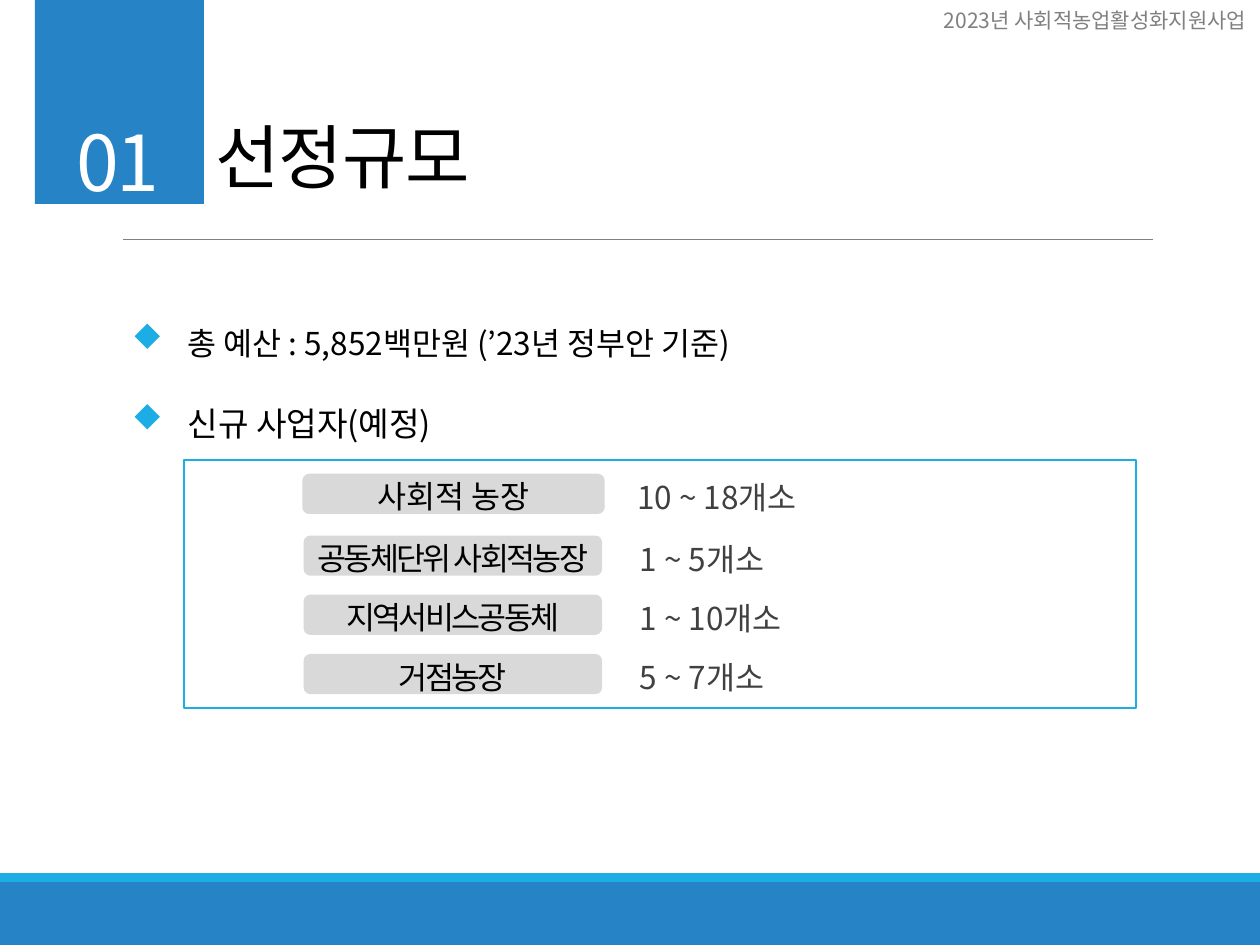
import pptx
import pptx.util
import pptx.dml.color
import pptx.enum.shapes
import pptx.enum.text
import pptx.oxml.ns
import lxml.etree

Pt = pptx.util.Pt
KIND = pptx.enum.shapes.MSO_SHAPE
FIT = pptx.enum.text.MSO_AUTO_SIZE
ALIGN = pptx.enum.text.PP_ALIGN
FACE = "Noto Sans CJK KR"
HUES = {"blue": "2683C6", "sky": "1CADE4", "grey": "808080", "pale": "D9D9D9",
        "dark": "404040", "black": "000000", "white": "FFFFFF"}

# label, count, pill left, top and width, count left, letter spacing
ROWS = [
    ("사회적 농장", "10 ~ 18개소", 172.8, 270.7, 172.8, 357.1, 0),
    ("공동체단위 사회적농장", "1 ~ 5개소", 173.5, 306, 170.6, 358.6, -1.5),
    ("지역서비스공동체", "1 ~ 10개소", 173.5, 339.8, 170.6, 358.6, -1.5),
    ("거점농장", "5 ~ 7개소", 173.5, 373.7, 170.6, 358.6, -1.5),
]


def tint(name):
    return pptx.dml.color.RGBColor.from_string(HUES[name])


def place(item, box):
    item.left, item.top, item.width, item.height = map(Pt, box)


def write(item, text, size=18, hue="black", face=FACE, align=ALIGN.LEFT,
          track=0, lead=1.0, before=0, after=0, anchor="TOP", fit=FIT.NONE):
    frame = item.text_frame
    frame.word_wrap = True
    frame.auto_size = fit
    frame.vertical_anchor = getattr(pptx.enum.text.MSO_ANCHOR, anchor)
    para = frame.paragraphs[0]
    para.alignment = align
    para.line_spacing = lead
    para.space_before, para.space_after = Pt(before), Pt(after)
    run = para.add_run()
    run.text = text
    run.font.size = Pt(size)
    run.font.name = face
    run.font.color.rgb = tint(hue)
    props = run.font._element
    # East Asian face follows the Latin one
    east = lxml.etree.Element(pptx.oxml.ns.qn("a:ea"), typeface=face)
    props.find(pptx.oxml.ns.qn("a:latin")).addnext(east)
    if track:
        props.set("spc", str(int(track * 100)))


def label(slide, box, text, **form):
    item = slide.shapes.add_textbox(*map(Pt, box))
    write(item, text, **form)


def block(slide, box, fill=None, line=None, kind=KIND.RECTANGLE):
    item = slide.shapes.add_shape(kind, *map(Pt, box))
    item.shadow.inherit = False
    if fill:
        item.fill.solid()
        item.fill.fore_color.rgb = tint(fill)
    else:
        item.fill.background()
    if line:
        item.line.color.rgb = tint(line)
        item.line.width = Pt(1.25)
    else:
        item.line.fill.background()


def rule(slide, left, right, top):
    line = slide.shapes.add_connector(
        pptx.enum.shapes.MSO_CONNECTOR.STRAIGHT,
        Pt(left), Pt(top), Pt(right), Pt(top))
    line.line.color.rgb = tint("grey")
    line.line.width = Pt(0.5)
    lxml.etree.SubElement(line._element.spPr, pptx.oxml.ns.qn("a:effectLst"))


def point(slide, body, box, mark, text, **form):
    block(slide, (77, mark, 14.4, 14.4), fill="sky", kind=KIND.DIAMOND)
    place(body, box)
    write(body, text, before=12, after=2, **form)
    # The diamond stands in for the list bullet
    props = body.text_frame.paragraphs[0]._p.get_or_add_pPr()
    props.set("marL", "0")
    props.set("indent", "0")
    lxml.etree.SubElement(props, pptx.oxml.ns.qn("a:buNone"))


def row(slide, name, count, left, top, width, next_left, track):
    block(slide, (left, top, width, 23), fill="pale",
          kind=KIND.ROUNDED_RECTANGLE)
    label(slide, (left + width / 2 - 107.7, top - 1.5, 215.3, 29), name,
          align=ALIGN.CENTER, track=track)
    label(slide, (next_left, top - 1, 160, 29), count, hue="dark")


def main():
    deck = pptx.Presentation()
    deck.slide_width, deck.slide_height = Pt(720), Pt(540)
    slide = deck.slides.add_slide(deck.slide_layouts[3])
    title, first, second = list(slide.placeholders)[:3]

    # Footer bands, rule and running head
    block(slide, (0, 504, 720, 36), fill="blue")
    block(slide, (0, 499, 720, 5), fill="sky")
    rule(slide, 70.5, 659, 136.8)
    label(slide, (509.8, 0.7, 209.5, 21.6), "2023년 사회적농업활성화지원사업",
          size=12, hue="grey", align=ALIGN.RIGHT)

    # Section number and title
    block(slide, (20, 0, 96.5, 116.6), fill="blue")
    label(slide, (36.7, 62, 67.7, 60.5), "01", size=44, hue="white",
          track=-1.5)
    place(title, (116, 26.6, 244, 90))
    write(title, "선정규모", size=40, face="Calibri", track=-0.5, lead=0.85,
          anchor="BOTTOM")

    # Main points
    point(slide, first, (100, 170.6, 554.4, 37.4), 185,
          "총 예산 : 5,852백만원 (’23년 정부안 기준)", lead=1.5)
    point(slide, second, (100, 226.8, 554.4, 30.2), 231,
          "신규 사업자(예정)", size=19)

    # Framed list of planned numbers
    for item in ROWS:
        row(slide, *item)
    block(slide, (105, 262.8, 544.3, 141.8), line="sky")

    deck.save("out.pptx")


if __name__ == "__main__":
    main()
